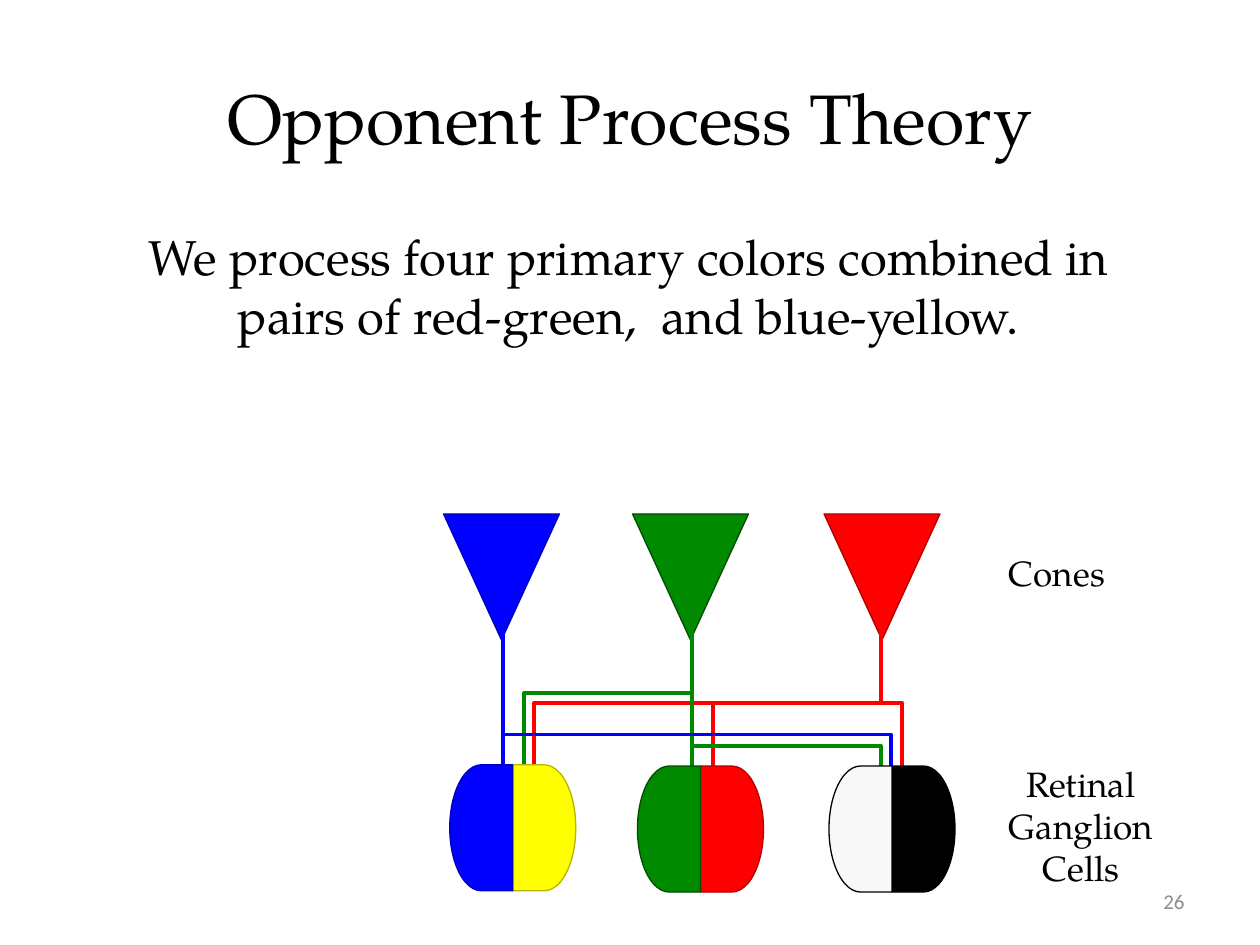
from lxml import etree
from pptx import Presentation
from pptx.dml.color import RGBColor
from pptx.enum.shapes import MSO_CONNECTOR, MSO_SHAPE
from pptx.enum.text import MSO_ANCHOR, PP_ALIGN
from pptx.oxml.ns import qn
from pptx.util import Inches, Pt

STRAIGHT = MSO_CONNECTOR.STRAIGHT
TRIANGLE, DELAY = MSO_SHAPE.ISOSCELES_TRIANGLE, MSO_SHAPE.FLOWCHART_DELAY
TOP, MIDDLE = MSO_ANCHOR.TOP, MSO_ANCHOR.MIDDLE
LEFT, CENTER, RIGHT = PP_ALIGN.LEFT, PP_ALIGN.CENTER, PP_ALIGN.RIGHT

BLACK = RGBColor(0x00, 0x00, 0x00)
GRAY = RGBColor(0x8C, 0x8C, 0x8C)
WHITE = RGBColor(0xF8, 0xF8, 0xF8)
BLUE = RGBColor(0x00, 0x00, 0xFF)
GREEN = RGBColor(0x00, 0x8A, 0x00)
RED = RGBColor(0xFF, 0x00, 0x00)
YELLOW = RGBColor(0xFF, 0xFF, 0x00)
EDGES = {
    BLUE: RGBColor(0x00, 0x00, 0xC0),
    GREEN: RGBColor(0x00, 0x4C, 0x00),
    RED: RGBColor(0xB0, 0x00, 0x00),
    YELLOW: RGBColor(0xB8, 0xB4, 0x00),
}
SERIF, SANS = "TeX Gyre Pagella", "Calibri"

deck = Presentation()
deck.slide_width, deck.slide_height = Inches(10), Inches(7.5)
page = deck.slides.add_slide(deck.slide_layouts[6])


def add_solid(kind, left, top, width, color, flip=None):
    """Add a filled cone or half cell, one inch high."""
    shape = page.shapes.add_shape(kind, Inches(left), Inches(top), Inches(width), Inches(1))
    shape.shadow.inherit = False
    shape.fill.solid()
    shape.fill.fore_color.rgb = color
    shape.line.color.rgb = EDGES.get(color, BLACK)
    shape.line.width = Pt(0.75)
    if flip:
        shape._element.spPr.xfrm.set(flip, "1")


def add_wire(color, *points):
    """Add a straight line for two points, a bent one for more."""
    spots = [(Inches(x), Inches(y)) for x, y in points]
    if len(spots) == 2:
        wire = page.shapes.add_connector(STRAIGHT, *spots[0], *spots[1])
        etree.SubElement(wire._element.spPr, qn("a:effectLst"))
    else:
        builder = page.shapes.build_freeform(*spots[0])
        builder.add_line_segments(spots[1:], close=False)
        wire = builder.convert_to_shape()
        wire.fill.background()
        wire.shadow.inherit = False
    wire.line.color.rgb = color
    wire.line.width = Pt(2.25)


# Wires that run behind the cells
BLUE_X, GREEN_X, RED_X = 3.99, 5.49, 6.99
WIRE_END = 6.17
add_wire(GREEN, (GREEN_X, 5.5), (4.16, 5.5), (4.16, 6.25))
add_wire(RED, (5.66, 5.58), (4.24, 5.58), (4.24, WIRE_END))

# Cones
for left, color in ((3.52, BLUE), (5.02, GREEN), (6.54, RED)):
    add_solid(TRIANGLE, left, 4.08, 0.92, color, "flipV")

# Wires from the cones to the cells
add_wire(BLUE, (BLUE_X, 4.83), (BLUE_X, 6.42))
add_wire(GREEN, (GREEN_X, 4.75), (GREEN_X, 6.33))
add_wire(RED, (RED_X, 4.83), (RED_X, 5.58), (5.66, 5.58), (5.66, WIRE_END))
add_wire(BLUE, (BLUE_X, 5.83), (7.07, 5.83), (7.07, WIRE_END))
add_wire(GREEN, (GREEN_X, 5.92), (RED_X, 5.92), (RED_X, WIRE_END))
add_wire(RED, (RED_X, 5.58), (7.16, 5.58), (7.16, WIRE_END))

# Retinal ganglion cells, each of two opponent halves
CELLS = (
    (3.57, 6.07, BLUE, YELLOW),
    (5.06, 6.08, GREEN, RED),
    (6.58, 6.08, WHITE, BLACK),
)
for left, top, left_color, right_color in CELLS:
    add_solid(DELAY, left + 0.5, top, 0.5, right_color)
    add_solid(DELAY, left, top, 0.5, left_color, "flipH")

# Title, statement, labels and page number
TEXTS = (
    (("Opponent Process Theory",), (0.5, 0.3, 9, 1.25), SERIF, 40, BLACK, True,
     MIDDLE, {"alignment": CENTER}),
    (("We process four primary colors combined in pairs of red-green,  and blue-yellow.",),
     (0.86, 1.75, 8.25, 1.83), SERIF, 28, BLACK, True,
     TOP, {"alignment": CENTER, "space_before": Pt(5.6)}),
    (("Cones",), (7.91, 4.33, 0.96, 0.43), SERIF, 20, BLACK, False,
     TOP, {"alignment": LEFT}),
    (("Retinal", "Ganglion", "Cells"), (7.91, 6, 1.34, 1.1), SERIF, 20, BLACK, False,
     TOP, {"alignment": CENTER}),
    (("26",), (7.17, 6.95, 2.33, 0.4), SANS, 12, GRAY, True,
     MIDDLE, {"alignment": RIGHT}),
)
for lines, place, font, size, color, wrap, anchor, layout in TEXTS:
    box = page.shapes.add_textbox(*(Inches(length) for length in place))
    frame = box.text_frame
    frame.word_wrap = wrap
    frame.vertical_anchor = anchor
    for index, line in enumerate(lines):
        para = frame.add_paragraph() if index else frame.paragraphs[0]
        for name, value in layout.items():
            setattr(para, name, value)
        span = para.add_run()
        span.text = line
        for name, value in {"name": font, "size": Pt(size)}.items():
            setattr(span.font, name, value)
        span.font.color.rgb = color

deck.save("out.pptx")
